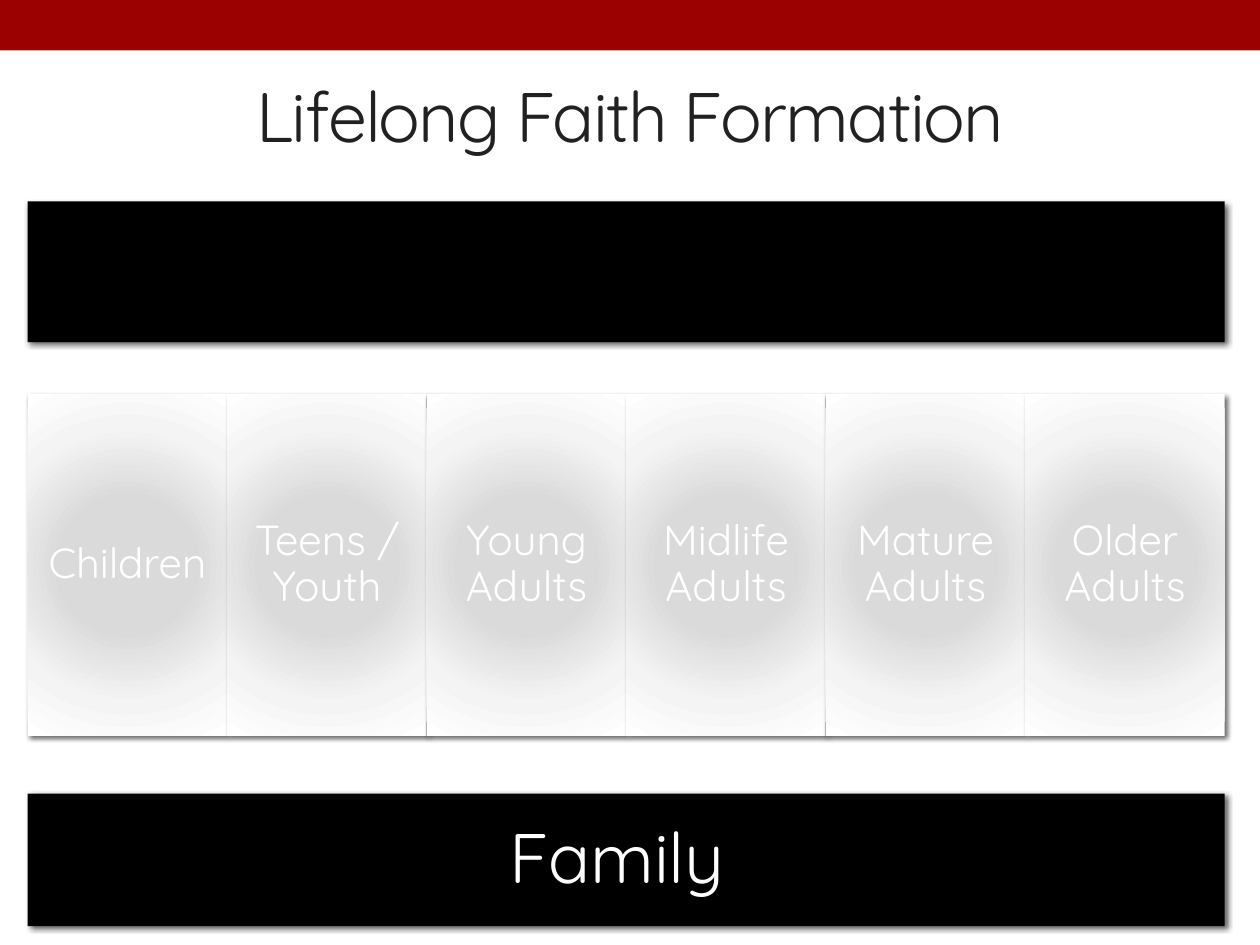
from lxml.etree import SubElement
from pptx import Presentation
from pptx.dml.color import RGBColor
from pptx.enum.shapes import MSO_SHAPE
from pptx.enum.text import MSO_ANCHOR, PP_ALIGN
from pptx.oxml import parse_xml
from pptx.oxml.ns import nsdecls, qn
from pptx.util import Cm, Pt

TITLE = "Lifelong Faith Formation"
AGE_GROUPS = ["Children", "Teens / Youth", "Young Adults",
              "Midlife Adults", "Mature Adults", "Older Adults"]
FAMILY = "Family"

FONT = "Quicksand"
COLORS = {"band": "9B0101", "bar": "000000", "title": "212121",
          "text": "FFFFFF", "shadow": "000000"}
TILE_STOPS = [(0, "DADADA"), (34, "DADADA"), (70, "F4F4F4"), (100, "FFFFFF")]

# Centimetres
PAGE_WIDTH, PAGE_HEIGHT = 25.4, 19.05
LEFT, WIDTH = 0.56, 24.13
TOP_BAR = (LEFT, 4.06, WIDTH, 2.84)
FAMILY_BAR = (LEFT, 16, WIDTH, 2.67)
TILE_TOP, TILE_HEIGHT = 7.95, 6.88
TILE_WIDTH = WIDTH / len(AGE_GROUPS)


def lengths(box):
    return [Cm(value) for value in box]


def add_rectangle(page, box, color):
    shape = page.shapes.add_shape(MSO_SHAPE.RECTANGLE, *lengths(box))
    shape.fill.solid()
    shape.fill.fore_color.rgb = RGBColor.from_string(color)
    shape.line.fill.background()
    shape.shadow.inherit = False
    return shape


def add_shadow(shape):
    effects = shape._element.spPr.find(qn("a:effectLst"))
    shadow = SubElement(effects, qn("a:outerShdw"), blurRad=str(Pt(3)),
                        dist=str(Pt(2)), dir="2700000", rotWithShape="0")
    color = SubElement(shadow, qn("a:srgbClr"), val=COLORS["shadow"])
    SubElement(color, qn("a:alpha"), val="60000")


def set_radial_gradient(shape, stops):
    """Replace the solid fill with a gradient that spreads from the centre."""
    stop_xml = "".join(
        f'<a:gs pos="{position * 1000}"><a:srgbClr val="{color}"/></a:gs>'
        for position, color in stops)
    gradient = parse_xml(
        f'<a:gradFill {nsdecls("a")} rotWithShape="1"><a:gsLst>{stop_xml}</a:gsLst>'
        '<a:path path="circle">'
        '<a:fillToRect l="50000" t="50000" r="50000" b="50000"/>'
        '</a:path></a:gradFill>')
    properties = shape._element.spPr
    properties.replace(properties.find(qn("a:solidFill")), gradient)


def write(shape, text, size, color, anchor=MSO_ANCHOR.MIDDLE):
    frame = shape.text_frame
    frame.text = text
    frame.word_wrap = True
    frame.vertical_anchor = anchor
    paragraph = frame.paragraphs[0]
    paragraph.alignment = PP_ALIGN.CENTER
    span = paragraph.runs[0]
    span.font.name = FONT
    span.font.size = Pt(size)
    span.font.color.rgb = RGBColor.from_string(color)
    return paragraph


def main():
    deck = Presentation()
    deck.slide_width, deck.slide_height = Cm(PAGE_WIDTH), Cm(PAGE_HEIGHT)
    page = deck.slides.add_slide(deck.slide_layouts[5])

    add_rectangle(page, (0, 0, PAGE_WIDTH, 1.02), COLORS["band"])

    title = page.shapes.title
    title.left, title.top, title.width, title.height = lengths((1.27, 1.07, 22.86, 2.46))
    heading = write(title, TITLE, 40, COLORS["title"])
    heading.runs[0].font._element.set("spc", "-100")

    add_shadow(add_rectangle(page, TOP_BAR, COLORS["bar"]))

    for index, group in enumerate(AGE_GROUPS):
        box = (LEFT + index * TILE_WIDTH, TILE_TOP, TILE_WIDTH, TILE_HEIGHT)
        tile = add_rectangle(page, box, TILE_STOPS[0][1])
        set_radial_gradient(tile, TILE_STOPS)
        add_shadow(tile)
        write(tile, group, 24, COLORS["text"]).line_spacing = 0.9

    add_shadow(add_rectangle(page, FAMILY_BAR, COLORS["bar"]))
    label = page.shapes.add_textbox(*lengths((3.53, 16.28, 17.81, 1.96)))
    write(label, FAMILY, 40, COLORS["text"], MSO_ANCHOR.TOP)

    deck.save("out.pptx")


if __name__ == "__main__":
    main()
